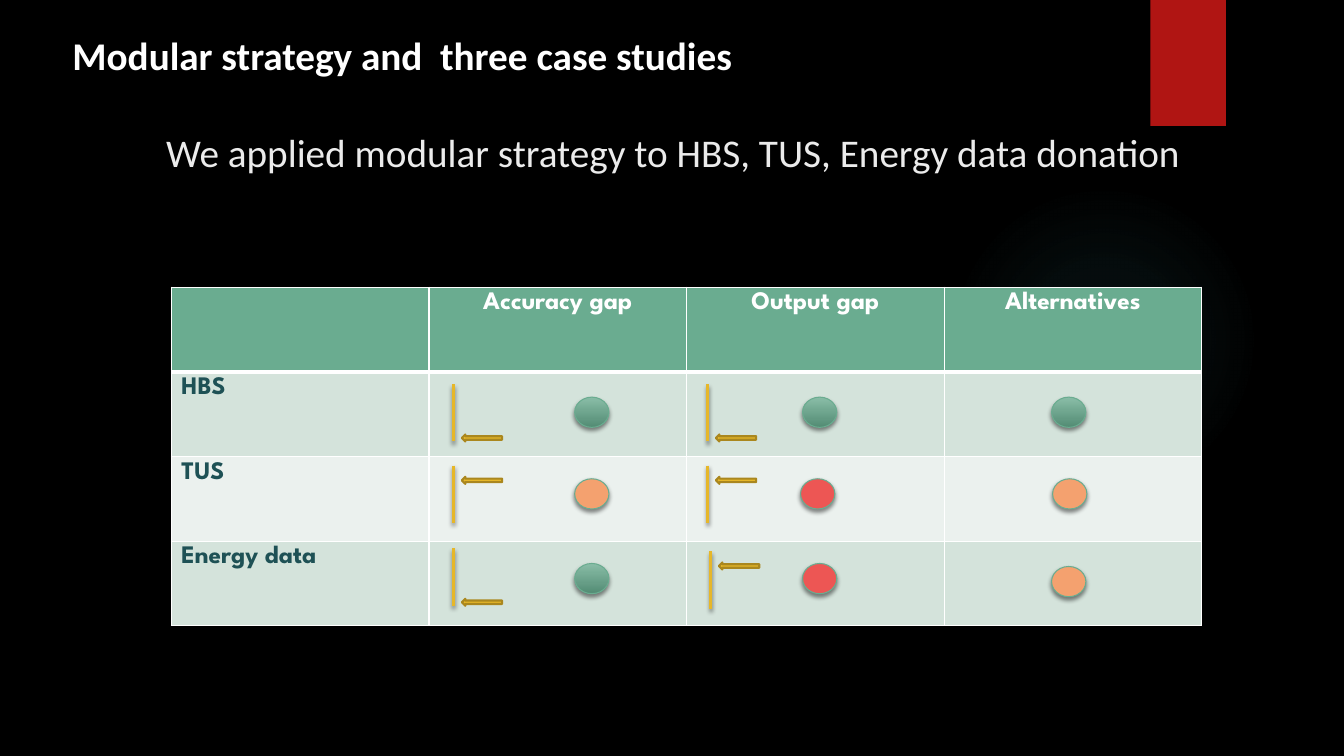
from lxml import etree
from pptx import Presentation
from pptx.dml.color import RGBColor as RGB
from pptx.enum.shapes import MSO_CONNECTOR as LINK, MSO_SHAPE as SHAPE
from pptx.enum.text import MSO_ANCHOR as ANCHOR, PP_ALIGN as ALIGN
from pptx.oxml import parse_xml
from pptx.oxml.ns import nsdecls, qn
from pptx.util import Inches, Pt

COLORS = {
    "black": "000000", "white": "FFFFFF", "pale": "EBEBEB", "red": "B01513",
    "glow": "50B9C1", "head": "6AAC90", "band": "D4E3DB", "light": "EBF1EE",
    "ink": "1E5155", "gold": "E6B729", "bronze": "AA871E",
    "top": "89BDA7", "base": "538C74", "orange": "F4A16F", "coral": "ED5654",
}
HEADS = ["", "Accuracy gap", "Output gap", "Alternatives"]
CASES = ["HBS", "TUS", "Energy data"]
LOW, HIGH = 0.5, 0.11
# Each gauge: left, top, arrow offset below the top
GAUGES = [
    (4.5, 3.81, LOW), (7.02, 3.81, LOW),
    (4.5, 4.62, HIGH), (7.02, 4.62, HIGH),
    (4.5, 5.44, LOW), (7.05, 5.47, HIGH),
]
# Each dot: left, top, colour
DOTS = [
    (5.7, 3.94, "green"), (7.96, 3.94, "green"), (10.43, 3.94, "green"),
    (5.7, 4.75, "orange"), (7.94, 4.75, "coral"), (10.44, 4.75, "orange"),
    (5.7, 5.59, "green"), (7.96, 5.59, "coral"), (10.43, 5.62, "orange"),
]


def color(name):
    return RGB.from_string(COLORS[name])


class Deck:
    def __init__(self):
        self.prs = Presentation()
        self.prs.slide_width = Inches(13.33)
        self.prs.slide_height = Inches(7.5)
        self.slide = self.prs.slides.add_slide(self.prs.slide_layouts[6])
        self.shapes = self.slide.shapes
        fill = self.slide.background.fill
        fill.solid()
        fill.fore_color.rgb = color("black")

    def add_text(self, para, text, size, font, tint, bold=False):
        run = para.add_run()
        run.text = text
        run.font.size = Pt(size)
        run.font.name = font
        run.font.bold = bold
        run.font.color.rgb = color(tint)

    def label(self, box, text, tint, bold=False, wrap=True):
        frame = self.shapes.add_textbox(*map(Inches, box)).text_frame
        frame.word_wrap = wrap
        self.add_text(frame.paragraphs[0], text, 28, "Calibri", tint, bold)
        return frame

    def shade(self, item):
        """Add a soft shadow straight below."""
        props = item._element.spPr
        effects = props.find(qn("a:effectLst"))
        if effects is None:
            effects = etree.SubElement(props, qn("a:effectLst"))
        effects.append(parse_xml(
            f'<a:outerShdw {nsdecls("a")} blurRad="{Pt(3)}" dist="{Pt(2)}" '
            'dir="5400000" rotWithShape="0"><a:srgbClr val="000000">'
            '<a:alpha val="45000"/></a:srgbClr></a:outerShdw>'))

    def shape(self, kind, box, tint, edge=None, width=0.75):
        item = self.shapes.add_shape(kind, *map(Inches, box))
        item.shadow.inherit = False
        if tint == "green":
            item.fill.gradient()
            item.fill.gradient_angle = 270
            for stop, name in zip(item.fill.gradient_stops, ("top", "base")):
                stop.color.rgb = color(name)
        else:
            item.fill.solid()
            item.fill.fore_color.rgb = color(tint)
        if edge:
            item.line.color.rgb = color(edge)
            item.line.width = Pt(width)
        else:
            item.line.fill.background()
        return item

    def glow(self, box):
        item = self.shape(SHAPE.OVAL, box, "glow")
        stops = "".join(
            f'<a:gs pos="{pos}000"><a:srgbClr val="{COLORS["glow"]}">'
            f'<a:alpha val="{alpha}000"/></a:srgbClr></a:gs>'
            for pos, alpha in ((0, 7), (36, 6), (69, 0), (100, 0)))
        props = item._element.spPr
        props.replace(props.find(qn("a:solidFill")), parse_xml(
            f'<a:gradFill {nsdecls("a")}><a:gsLst>{stops}</a:gsLst>'
            '<a:path path="circle"><a:fillToRect l="50000" t="50000" '
            'r="50000" b="50000"/></a:path></a:gradFill>'))

    def gauge(self, left, top, drop):
        """Draw an upright bar with an arrow pointing at a level on it."""
        ends = map(Inches, (left, top, left, top + 0.57))
        bar = self.shapes.add_connector(LINK.STRAIGHT, *ends)
        bar.line.color.rgb = color("gold")
        bar.line.width = Pt(2.25)
        self.shade(bar)
        arrow = self.shape(SHAPE.RIGHT_ARROW, (left + 0.08, top + drop, 0.4, 0.07),
                           "gold", "bronze", 1.5)
        arrow.rotation = 180

    def dot(self, left, top, tint):
        self.shade(self.shape(SHAPE.OVAL, (left, top, 0.34, 0.3), tint, "head"))

    def cell(self, cell, text, fill, tint, align, rules):
        cell.fill.solid()
        cell.fill.fore_color.rgb = color(fill)
        para = cell.text_frame.paragraphs[0]
        para.alignment = align
        if text:
            self.add_text(para, text, 18, "League Spartan", tint, True)
        props = cell._tc.get_or_add_tcPr()
        for spot, (side, width) in enumerate(rules.items()):
            props.insert(spot, parse_xml(
                f'<a:ln{side} {nsdecls("a")} w="{Pt(width)}"><a:solidFill>'
                f'<a:srgbClr val="{COLORS["white"]}"/></a:solidFill></a:ln{side}>'))

    def table(self, box, rows):
        grid = self.shapes.add_table(len(rows), len(rows[0]), *map(Inches, box)).table
        for r, row in enumerate(rows):
            rules = {"L": 1, "R": 1, "T": 3 if r == 1 else 1, "B": 1 if r else 3}
            fill = ("light" if r % 2 == 0 else "band") if r else "head"
            tint, align = ("ink", ALIGN.LEFT) if r else ("white", ALIGN.CENTER)
            for c, text in enumerate(row):
                self.cell(grid.cell(r, c), text, fill, tint, align, rules)


def main():
    deck = Deck()
    deck.glow((9.41, 1.83, 3.08, 3.08))
    deck.shade(deck.shape(SHAPE.RECTANGLE, (11.41, 0, 0.75, 1.25), "red"))
    lead = deck.label((1.55, 1.01, 11.17, 1.25),
                      "We applied modular strategy to HBS, TUS, Energy data donation",
                      "pale")
    lead.vertical_anchor = ANCHOR.BOTTOM
    lead.margin_bottom = Inches(0.52)
    deck.label((0.62, 0.26, 7.02, 0.57), "Modular strategy and  three case studies",
               "white", True, False)
    deck.table((1.7, 2.85, 10.22, 3.36),
               [HEADS] + [[case, "", "", ""] for case in CASES])
    for gauge in GAUGES:
        deck.gauge(*gauge)
    for dot in DOTS:
        deck.dot(*dot)
    deck.prs.save("out.pptx")


if __name__ == "__main__":
    main()
